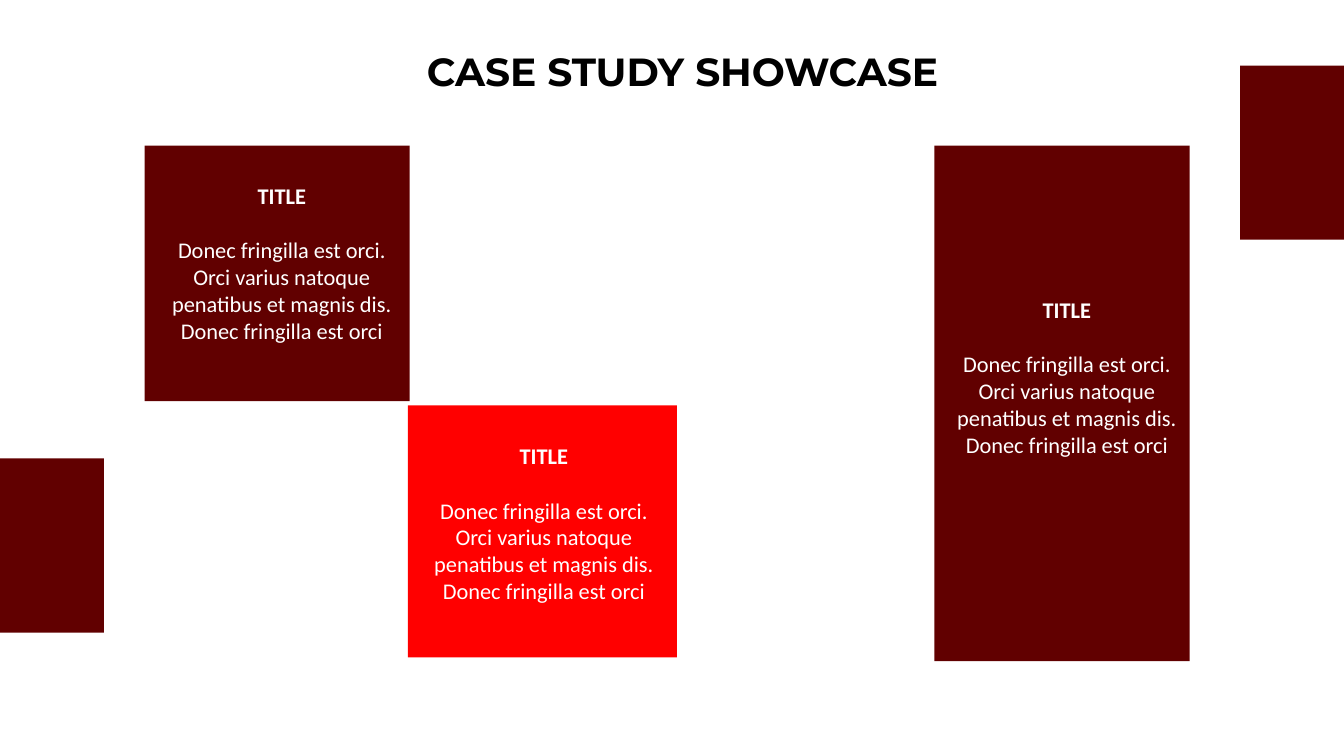
import pptx
import pptx.dml.color
import pptx.enum.shapes
import pptx.enum.text
import pptx.util
from dataclasses import dataclass

Pt = pptx.util.Pt


@dataclass(frozen=True)
class Theme:
    maroon: str = "610000"
    red: str = "FF0000"
    white: str = "FFFFFF"
    black: str = "000000"
    heading_font: str = "Montserrat"
    body_font: str = "Calibri"
    heading_size: int = 28
    body_size: int = 16


theme = Theme()

deck = pptx.Presentation()
deck.slide_width, deck.slide_height = Pt(960), Pt(540)
page = deck.slides.add_slide(deck.slide_layouts[6])


def add_block(left, top, width, height, color):
    block = page.shapes.add_shape(
        pptx.enum.shapes.MSO_SHAPE.RECTANGLE, Pt(left), Pt(top), Pt(width), Pt(height))
    block.shadow.inherit = False
    block.fill.solid()
    block.fill.fore_color.rgb = pptx.dml.color.RGBColor.from_string(color)
    block.line.fill.background()


def add_text(left, top, width, height, lines, color, font_format):
    """Add a centred text box; lines holds (text, bold, space after) triples."""
    box = page.shapes.add_textbox(Pt(left), Pt(top), Pt(width), Pt(height))
    frame = box.text_frame
    frame.word_wrap = True
    frame.auto_size = pptx.enum.text.MSO_AUTO_SIZE.SHAPE_TO_FIT_TEXT
    for index, (text, bold, gap) in enumerate(lines):
        para = frame.paragraphs[0] if index == 0 else frame.add_paragraph()
        para.alignment = pptx.enum.text.PP_ALIGN.CENTER
        para.space_after = Pt(gap)
        span = para.add_run()
        span.text = text
        span.font.color.rgb = pptx.dml.color.RGBColor.from_string(color)
        for name, value in {**font_format, "bold": bold}.items():
            setattr(span.font, name, value)
    return frame


# Case panels: panel place, then the left and top of its text
cases = [
    ((103.3, 104, 189.4, 182.6), theme.maroon, (110.2, 126.7)),
    ((291.4, 289.6, 192.2, 180), theme.red, (297.4, 312.5)),
    ((667.4, 104, 182.3, 368.2), theme.maroon, (671, 208.1)),
]
for place, color, text_corner in cases:
    add_block(*place, color)

heading = add_text(
    182.9, 30.2, 537.1, 41, [("CASE STUDY SHOWCASE", True, 0)], theme.black,
    {"name": theme.heading_font, "size": Pt(theme.heading_size)})
heading.margin_left = Pt(79.2)

case_lines = [
    ("TITLE", True, 19.5),
    ("Donec fringilla est orci. Orci varius natoque penatibus et magnis dis. "
     "Donec fringilla est orci", False, 0),
]
for place, color, text_corner in cases:
    add_text(*text_corner, 182.2, 123.8, case_lines, theme.white,
             {"name": theme.body_font, "size": Pt(theme.body_size)})

# Accents on the left and right page edges
for left, top in [(0, 327.4), (885.8, 46.8)]:
    add_block(left, top, 74.2, 124.4, theme.maroon)

deck.save("out.pptx")
